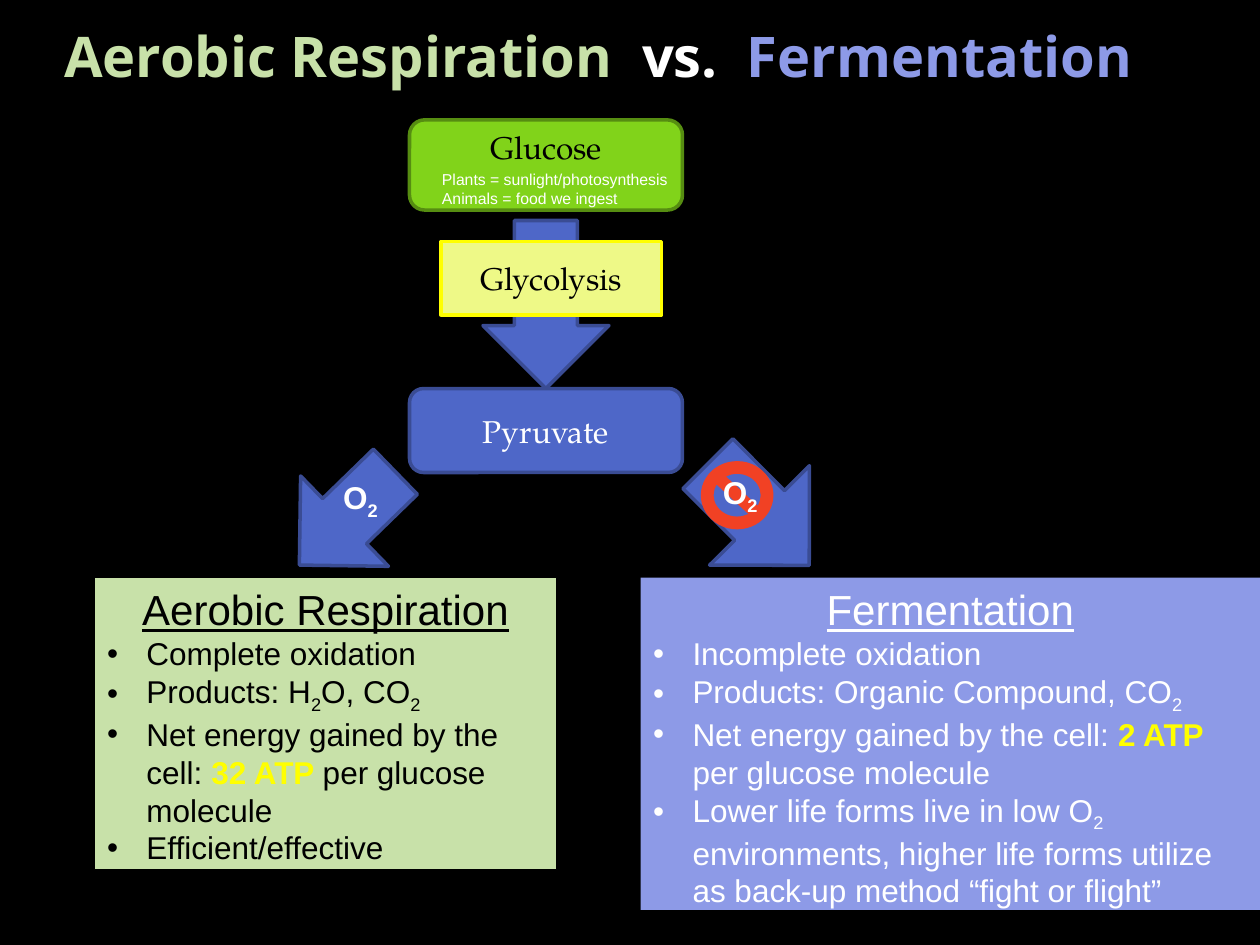
from lxml.etree import SubElement
from pptx import Presentation
from pptx.dml.color import RGBColor
from pptx.enum.shapes import MSO_SHAPE
from pptx.enum.text import MSO_ANCHOR, MSO_AUTO_SIZE, PP_ALIGN
from pptx.oxml.ns import qn
from pptx.util import Pt

BLACK = RGBColor(0x00, 0x00, 0x00)
WHITE = RGBColor(0xFF, 0xFF, 0xFF)
YELLOW = RGBColor(0xFF, 0xFF, 0x00)
PALE_YELLOW = RGBColor(0xEE, 0xF9, 0x87)
BLUE = RGBColor(0x4E, 0x67, 0xC8)
DARK_BLUE = RGBColor(0x3A, 0x4C, 0x94)
LAVENDER = RGBColor(0x8D, 0x9A, 0xE7)
GREEN = RGBColor(0x81, 0xD3, 0x1A)
DARK_GREEN = RGBColor(0x56, 0x8D, 0x11)
PALE_GREEN = RGBColor(0xC8, 0xE1, 0xA9)
RED = RGBColor(0xF1, 0x41, 0x24)

SANS, SERIF, TITLE_FONT = "Arial", "TeX Gyre Pagella", "Open Sans"
BULLET_INDENT = Pt(22.5)
SUBSCRIPT_TWO = ("2", {"subscript": True})

AEROBIC_POINTS = [
    ["Complete oxidation"],
    ["Products: H", SUBSCRIPT_TWO, "O, CO", SUBSCRIPT_TWO],
    ["Net energy gained by the cell: ", ("32 ATP ", {"outline": 0.25}), "per glucose molecule"],
    ["Efficient/effective"],
]
FERMENTATION_POINTS = [
    ["Incomplete oxidation"],
    ["Products: Organic Compound, CO", SUBSCRIPT_TWO],
    ["Net energy gained by the cell: ", ("2 ATP ", {"outline": 0.75}), "per glucose molecule"],
    ["Lower life forms live in low O", SUBSCRIPT_TWO,
     " environments, higher life forms utilize as back-up method “fight or flight”"],
]


def place(shape, left, top, width, height):
    position = {"left": left, "top": top, "width": width, "height": height}
    for name, value in position.items():
        setattr(shape, name, Pt(value))


def add_run(paragraph, text, color, **formats):
    run = paragraph.add_run()
    run.text = text
    for name, value in formats.items():
        setattr(run.font, name, value)
    run.font.color.rgb = color
    return run


def outline_text(run, width):
    properties = run._r.get_or_add_rPr()
    line = SubElement(properties, qn("a:ln"), w=str(Pt(width)))
    fill = SubElement(line, qn("a:solidFill"))
    SubElement(fill, qn("a:srgbClr"), val=str(BLACK))
    properties.insert(0, line)


def add_rich_text(paragraph, parts, color, **formats):
    """Parts are plain strings, or pairs of a string and its special style."""
    for part in parts:
        text, style = (part, {}) if isinstance(part, str) else part
        if "outline" in style:
            run = add_run(paragraph, text, YELLOW, **{**formats, "bold": True})
            outline_text(run, style["outline"])
        else:
            run = add_run(paragraph, text, color, **formats)
        if "subscript" in style:
            run._r.get_or_add_rPr().set("baseline", "-25000")


def add_block(slide, kind, box, fill, line=None, rotation=0):
    shape = slide.shapes.add_shape(kind, *map(Pt, box))
    shape.shadow.inherit = False
    shape.rotation = rotation
    shape.fill.solid()
    shape.fill.fore_color.rgb = fill
    if line is None:
        shape.line.fill.background()
    else:
        shape.line.color.rgb = line
        shape.line.width = Pt(2)
    return shape


def add_stage(slide, kind, box, fill, line, text, color):
    shape = add_block(slide, kind, box, fill, line)
    shape.text_frame.vertical_anchor = MSO_ANCHOR.MIDDLE
    paragraph = shape.text_frame.paragraphs[0]
    paragraph.alignment = PP_ALIGN.CENTER
    add_run(paragraph, text, color, size=Pt(18), name=SERIF)
    return shape


def add_label(slide, box, lines, alignment, **formats):
    frame = slide.shapes.add_textbox(*map(Pt, box)).text_frame
    frame.word_wrap = False
    frame.auto_size = MSO_AUTO_SIZE.SHAPE_TO_FIT_TEXT
    for index, parts in enumerate(lines):
        paragraph = frame.add_paragraph() if index else frame.paragraphs[0]
        paragraph.alignment = alignment
        add_rich_text(paragraph, parts, WHITE, name=SANS, **formats)


def fill_title(title):
    place(title, 29.5, 18.5, 678, 36)
    title.text_frame.vertical_anchor = MSO_ANCHOR.BOTTOM
    title.text_frame.auto_size = MSO_AUTO_SIZE.NONE
    paragraph = title.text_frame.paragraphs[0]
    paragraph.alignment = PP_ALIGN.LEFT
    words = [("Aerobic Respiration  ", PALE_GREEN), ("vs.  ", WHITE), ("Fermentation", LAVENDER)]
    for text, color in words:
        add_run(paragraph, text, color, size=Pt(32), name=TITLE_FONT, bold=True)


def fill_panel(panel, box, fill, color, heading, points):
    place(panel, *box)
    panel.fill.solid()
    panel.fill.fore_color.rgb = fill
    frame = panel.text_frame
    frame.auto_size = MSO_AUTO_SIZE.NONE
    paragraph = frame.paragraphs[0]
    paragraph.alignment = PP_ALIGN.CENTER
    paragraph.space_before = Pt(0)
    properties = paragraph._p.get_or_add_pPr()
    properties.set("marL", "0")
    properties.set("indent", "0")
    SubElement(properties, qn("a:buNone"))
    add_run(paragraph, heading, color, size=Pt(24), name=SANS, underline=True)
    for parts in points:
        paragraph = frame.add_paragraph()
        paragraph.space_before = Pt(0)
        properties = paragraph._p.get_or_add_pPr()
        properties.set("marL", str(BULLET_INDENT))
        properties.set("indent", str(-BULLET_INDENT))
        SubElement(properties, qn("a:buFont"), typeface=SANS)
        SubElement(properties, qn("a:buChar"), char="•")
        add_rich_text(paragraph, parts, color, size=Pt(18), name=SANS)


def add_pathway(slide):
    arrows = [
        ((393.25, 253, 80.5, 82), 315.1),
        ((276, 126, 72, 96), 0),
        ((162.5, 258, 72, 76.5), 45.8),
    ]
    for box, rotation in arrows:
        add_block(slide, MSO_SHAPE.DOWN_ARROW, box, BLUE, DARK_BLUE, rotation)
    add_block(slide, MSO_SHAPE.NO_SYMBOL, (400.5, 263.5, 41.5, 39), RED)
    glucose = add_stage(slide, MSO_SHAPE.ROUNDED_RECTANGLE, (234, 68.5, 156, 51.5),
                        GREEN, DARK_GREEN, "Glucose", BLACK)
    glucose.text_frame.vertical_anchor = MSO_ANCHOR.TOP
    glucose.text_frame.margin_top = Pt(2)
    add_stage(slide, MSO_SHAPE.RECTANGLE, (252, 138, 126, 42),
              PALE_YELLOW, YELLOW, "Glycolysis", BLACK)
    add_stage(slide, MSO_SHAPE.ROUNDED_RECTANGLE, (234, 222, 156, 48),
              BLUE, DARK_BLUE, "Pyruvate", WHITE)
    for left, top in [(405.5, 267), (188.5, 269.5)]:
        add_label(slide, (left, top, 35, 29), [["O", SUBSCRIPT_TWO]],
                  PP_ALIGN.CENTER, size=Pt(18), bold=True)
    add_label(slide, (245.5, 93.5, 144.5, 29),
              [["Plants = sunlight/photosynthesis"], ["Animals = food we ingest"]],
              PP_ALIGN.LEFT, size=Pt(9))


def main():
    presentation = Presentation()
    presentation.slide_width, presentation.slide_height = Pt(720), Pt(540)
    slide = presentation.slides.add_slide(presentation.slide_layouts[3])
    slide.background.fill.solid()
    slide.background.fill.fore_color.rgb = BLACK
    title, aerobic, fermentation = slide.placeholders
    fill_title(title)
    fill_panel(aerobic, (54, 330, 264, 167), PALE_GREEN, BLACK,
               "Aerobic Respiration", AEROBIC_POINTS)
    aerobic.line.color.rgb = BLACK
    aerobic.line.width = Pt(0.75)
    fill_panel(fermentation, (366, 330, 354, 190), LAVENDER, WHITE,
               "Fermentation", FERMENTATION_POINTS)
    add_pathway(slide)
    presentation.save("out.pptx")


if __name__ == "__main__":
    main()
